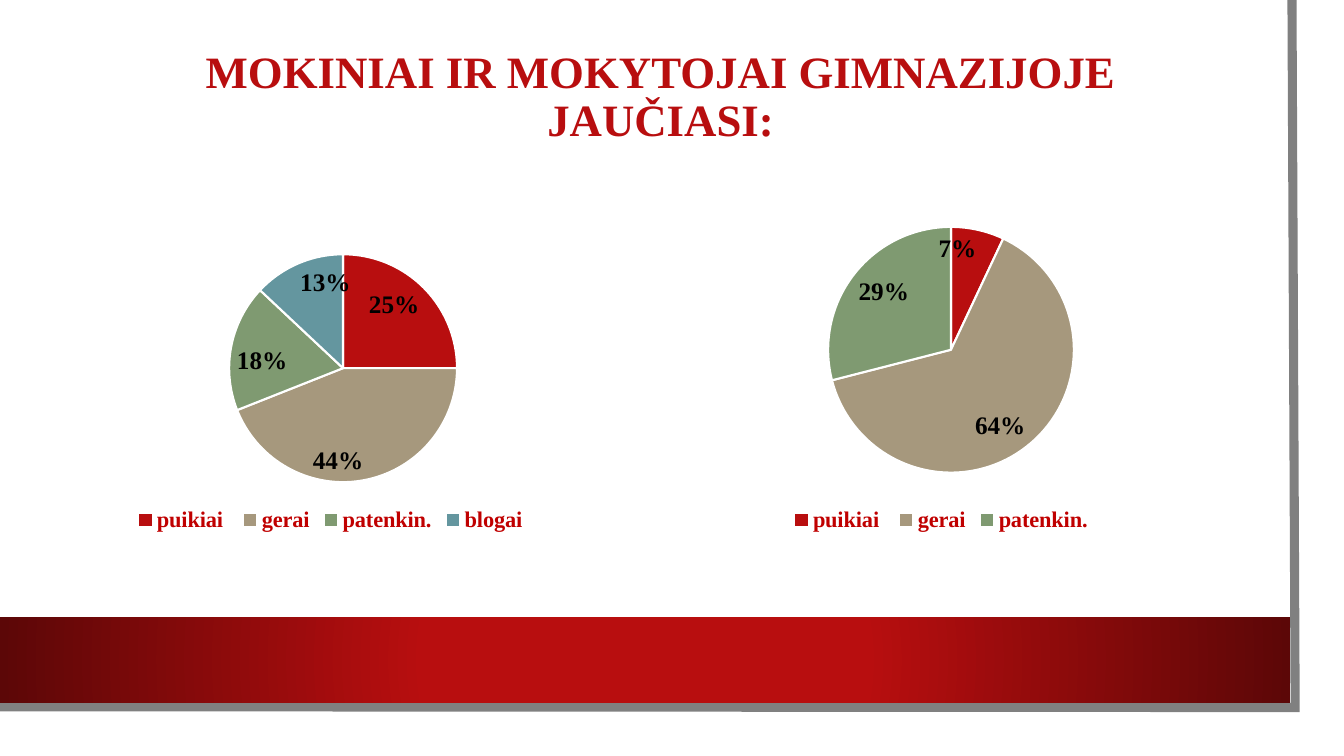
from lxml import etree
from pptx import Presentation
from pptx.chart.data import CategoryChartData
from pptx.dml.color import RGBColor
from pptx.enum.chart import XL_CHART_TYPE, XL_LABEL_POSITION, XL_LEGEND_POSITION
from pptx.enum.shapes import MSO_SHAPE
from pptx.enum.text import MSO_ANCHOR, PP_ALIGN
from pptx.oxml import parse_xml
from pptx.util import Cm, Pt

PIE = XL_CHART_TYPE.PIE
INSIDE = XL_LABEL_POSITION.INSIDE_END
BOTTOM = XL_LEGEND_POSITION.BOTTOM
RECT = MSO_SHAPE.RECTANGLE
MIDDLE = MSO_ANCHOR.MIDDLE
CENTER = PP_ALIGN.CENTER

# Content
TITLE = "MOKINIAI IR MOKYTOJAI GIMNAZIJOJE JAUČIASI:"
MOODS = ["puikiai ", "gerai", "patenkin.", "blogai"]
PIES = [  # values, plot area as shares of the chart (x, y, w, h)
    ([25, 44, 18, 13], (0.045, 0.225, 0.955, 0.625)),
    ([7, 64, 29], (0.035, 0.15, 0.965, 0.674)),
]

# Style
COLORS = {"red": "B80E0F", "dark": "5C0707", "legend": "C00000", "edge": "808080",
          "black": "000000", "white": "FFFFFF"}
SLICES = [COLORS["red"], "A6987D", "7F9A71", "64969F"]
SERIF = "Times New Roman"
BASE = "Arial Narrow"

# Layout in centimetres
EDGE = [(32.56, 0), (32.64, 17.83), (-0.08, 17.81)]
BAND = (0, 15.55, 32.51, 2.16)
HEAD = (2.21, 0.86, 28.88, 3.23)
LEFT, TOP, WIDE, HIGH, STEP = 1.27, 4.34, 14.12, 9.19, 15.39

NS_A = "http://schemas.openxmlformats.org/drawingml/2006/main"
NS_C = "http://schemas.openxmlformats.org/drawingml/2006/chart"


def rgb(code):
    return RGBColor.from_string(code)


def style(font, name, size, color, bold=True):
    font.name, font.size, font.bold = name, Pt(size), bold
    font.color.rgb = rgb(color)


def add_edge(shapes):
    first, *rest = [(Cm(x), Cm(y)) for x, y in EDGE]
    form = shapes.build_freeform(*first, scale=1.0)
    form.add_line_segments(rest, close=False)
    edge = form.convert_to_shape()
    edge.shadow.inherit = False
    edge.fill.background()
    edge.line.color.rgb = rgb(COLORS["edge"])
    edge.line.width = Pt(6.5)
    # Sharp corner
    line = edge.line._get_or_add_ln()
    etree.SubElement(line, f"{{{NS_A}}}miter").set("lim", "800000")


def add_band(shapes):
    band = shapes.add_shape(RECT, *map(Cm, BAND))
    band.shadow.inherit = False
    band.line.fill.background()
    band.fill.gradient()
    grad = band.fill._xPr.find(f"{{{NS_A}}}gradFill")
    stops = "".join(f'<a:gs pos="{pos}"><a:srgbClr val="{COLORS[name]}"/></a:gs>'
                    for pos, name in ((34000, "red"), (100000, "dark")))
    grad.getparent().replace(grad, parse_xml(
        f'<a:gradFill xmlns:a="{NS_A}" rotWithShape="1"><a:gsLst>{stops}</a:gsLst>'
        '<a:path path="circle"><a:fillToRect l="50000" t="50000" r="50000" b="50000"/>'
        '</a:path></a:gradFill>'))


def place_plot(plot, box):
    area = plot._element.getparent()
    for old in area.findall(f"{{{NS_C}}}layout"):
        area.remove(old)
    layout = etree.Element(f"{{{NS_C}}}layout")
    manual = etree.SubElement(layout, f"{{{NS_C}}}manualLayout")
    rules = [("layoutTarget", "inner"), ("xMode", "edge"), ("yMode", "edge")]
    for tag, val in rules + list(zip("xywh", box)):
        etree.SubElement(manual, f"{{{NS_C}}}{tag}").set("val", str(val))
    area.insert(0, layout)


def add_pie(shapes, left, vals, box):
    data = CategoryChartData()
    data.categories = MOODS[:len(vals)]
    data.add_series("Series 1", vals)
    chart = shapes.add_chart(PIE, Cm(left), Cm(TOP), Cm(WIDE), Cm(HIGH), data).chart
    style(chart.font, BASE, 10, COLORS["black"], False)
    chart.has_title = False
    chart.has_legend = True
    chart.legend.position = BOTTOM
    chart.legend.include_in_layout = False
    style(chart.legend.font, SERIF, 16, COLORS["legend"])

    # Slices
    plot = chart.plots[0]
    plot.vary_by_categories = True
    place_plot(plot, box)
    for i in range(len(vals)):
        part = plot.series[0].points[i].format
        part.fill.solid()
        part.fill.fore_color.rgb = rgb(SLICES[i])
        part.line.color.rgb = rgb(COLORS["white"])
        part.line.width = Pt(1.5)

    # Percent labels
    labels = plot.series[0].data_labels
    labels.show_percentage = True
    labels.show_value = False
    labels.number_format = "0%"
    labels.number_format_is_linked = False
    labels.position = INSIDE
    style(labels.font, SERIF, 18, COLORS["black"])


def main():
    prs = Presentation()
    prs.slide_width, prs.slide_height = Cm(33.87), Cm(19.05)
    slide = prs.slides.add_slide(prs.slide_layouts[5])
    shapes = slide.shapes

    # Frame
    add_edge(shapes)
    add_band(shapes)

    # Title
    title = shapes.title
    title.left, title.top, title.width, title.height = map(Cm, HEAD)
    frame = title.text_frame
    frame.text = TITLE
    frame.word_wrap = True
    frame.vertical_anchor = MIDDLE
    line = frame.paragraphs[0]
    line.alignment = CENTER
    line.line_spacing = 0.9
    style(line.font, SERIF, 32, COLORS["red"])

    # Charts
    for i, (vals, box) in enumerate(PIES):
        add_pie(shapes, LEFT + i * STEP, vals, box)

    prs.save("out.pptx")


if __name__ == "__main__":
    main()
